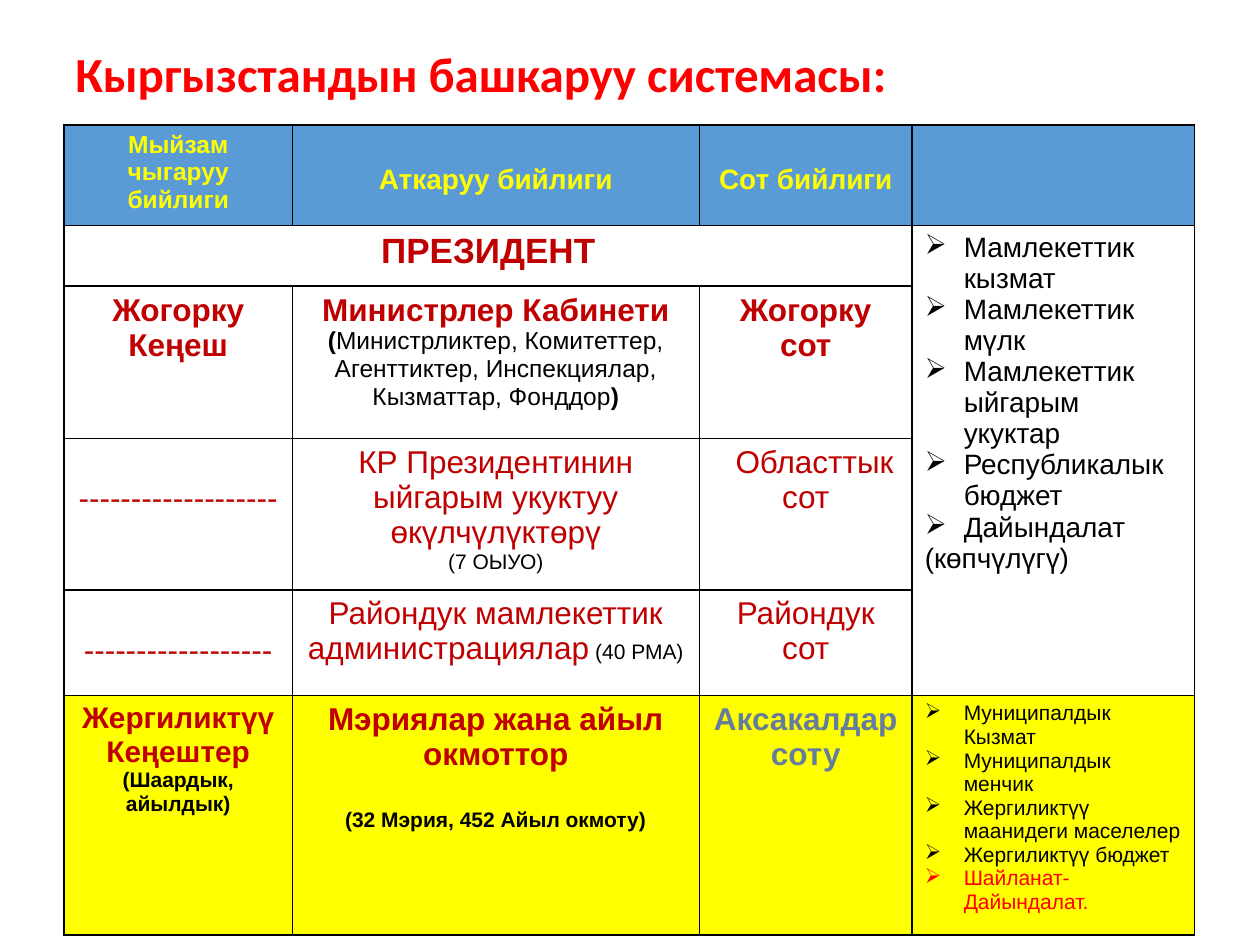
import pptx
import pptx.dml.color
import pptx.enum.text
import pptx.oxml.ns
import pptx.util
from lxml import etree

RGBColor = pptx.dml.color.RGBColor
PP_ALIGN = pptx.enum.text.PP_ALIGN
qn = pptx.oxml.ns.qn

BLACK = RGBColor(0x00, 0x00, 0x00)
WHITE = RGBColor(0xFF, 0xFF, 0xFF)
RED = RGBColor(0xFF, 0x00, 0x00)
DARK_RED = RGBColor(0xC0, 0x00, 0x00)
YELLOW = RGBColor(0xFF, 0xFF, 0x00)
BLUE = RGBColor(0x5B, 0x9B, 0xD5)
SLATE = RGBColor(0x65, 0x7D, 0x9D)

# Percent of the slide's width and height
COLUMNS = [18.1, 32.3, 16.9, 22.4]
ROWS = [10.53, 6.4, 16.13, 13.2, 11.2, 22]
ROW_FILLS = [BLUE, WHITE, WHITE, WHITE, WHITE, YELLOW]

STATE_DUTIES = ["Мамлекеттик кызмат", "Мамлекеттик мүлк", "Мамлекеттик ыйгарым укуктар",
                "Республикалык бюджет", "Дайындалат"]
LOCAL_DUTIES = ["Муниципалдык Кызмат", "Муниципалдык менчик",
                "Жергиликтүү маанидеги маселелер", "Жергиликтүү бюджет",
                "Шайланат- Дайындалат."]


def heading(text, size=18, color=DARK_RED):
    return (text, size, color, True)


def plain(text, size=18, color=DARK_RED):
    return (text, size, color, False)


# (row, column): paragraphs, each a list of runs
CENTRED = {
    (0, 0): [[heading("Мыйзам чыгаруу бийлиги", 14, YELLOW)]],
    (0, 1): [[heading("Аткаруу бийлиги", 16, YELLOW)]],
    (0, 2): [[heading("Сот бийлиги", 16, YELLOW)]],
    (1, 0): [[heading("ПРЕЗИДЕНТ", 20)]],
    (2, 0): [[heading("Жогорку Кеңеш")]],
    (2, 1): [[heading("Министрлер Кабинети")],
             [heading("(", 14, BLACK),
              plain("Министрликтер, Комитеттер, Агенттиктер, Инспекциялар, "
                    "Кызматтар, Фонддор", 14, BLACK),
              heading(")", 14, BLACK)]],
    (2, 2): [[heading("Жогорку сот")]],
    (3, 0): [[plain("-" * 19)]],
    (3, 1): [[plain("КР Президентинин ыйгарым укуктуу өкүлчүлүктөрү")],
             [plain("(7 ОЫУО)", 12, BLACK)]],
    (3, 2): [[plain("Областтык сот")]],
    (4, 0): [[plain("-" * 18)]],
    (4, 1): [[plain("Райондук мамлекеттик администрациялар"),
              plain(" (40 РМА)", 12, BLACK)]],
    (4, 2): [[plain("Райондук сот")]],
    (5, 0): [[heading("Жергиликтүү Кеңештер ", 17),
              heading("(Шаардык, айылдык)", 12, BLACK)]],
    (5, 1): [[heading("Мэриялар жана айыл окмоттор")],
             [heading("(32 Мэрия, 452 Айыл окмоту)", 12, BLACK)]],
    (5, 2): [[heading("Аксакалдар соту", color=SLATE)]],
}
# Inches from the cell's top edge to its text, where the text sits lower
TOP_MARGINS = {(0, 1): 0.31, (0, 2): 0.31, (3, 0): 0.34, (4, 0): 0.34}


class SlideBuilder:
    body_font = "Arial"
    title_font = "Calibri"
    line_width = pptx.util.Pt(1)
    bullet_indent = pptx.util.Inches(0.31)

    def __init__(self, prs):
        self.prs = prs
        self.slide = prs.slides.add_slide(prs.slide_layouts[6])

    def x(self, percent):
        return round(self.prs.slide_width * percent / 100)

    def y(self, percent):
        return round(self.prs.slide_height * percent / 100)

    def add_run(self, p, text, size, color, bold, font=None):
        r = p.add_run()
        r.text = text
        r.font.name = font or self.body_font
        r.font.size = pptx.util.Pt(size)
        r.font.bold = bold
        r.font.color.rgb = color

    def title(self, text, left, top, width, height):
        sp = self.slide.shapes.add_textbox(self.x(left), self.y(top),
                                           self.x(width), self.y(height))
        tf = sp.text_frame
        tf.word_wrap = True
        tf.vertical_anchor = pptx.enum.text.MSO_ANCHOR.MIDDLE
        p = tf.paragraphs[0]
        p.line_spacing = 0.9
        self.add_run(p, text, 28, RED, True, self.title_font)

    def table(self, left, top, columns, rows, row_fills):
        frame = self.slide.shapes.add_table(
            len(rows), len(columns), self.x(left), self.y(top),
            self.x(sum(columns)), self.y(sum(rows)))
        table = frame.table
        table.first_row = table.horz_banding = False
        for column, width in zip(table.columns, columns):
            column.width = self.x(width)
        for row, height, color in zip(table.rows, rows, row_fills):
            row.height = self.y(height)
            for cell in row.cells:
                self.borders(cell)
                cell.fill.solid()
                cell.fill.fore_color.rgb = color
        return table

    def borders(self, cell):
        tc_pr = cell._tc.get_or_add_tcPr()
        for side in ("a:lnL", "a:lnR", "a:lnT", "a:lnB"):
            ln = etree.SubElement(tc_pr, qn(side), w=str(self.line_width))
            fill = etree.SubElement(ln, qn("a:solidFill"))
            etree.SubElement(fill, qn("a:srgbClr"), val=str(BLACK))

    def paragraphs(self, cell, items, align):
        """Fill the cell with one paragraph per list of runs and return them."""
        tf = cell.text_frame
        for i, runs in enumerate(items):
            p = tf.add_paragraph() if i else tf.paragraphs[0]
            p.alignment = align
            for run in runs:
                self.add_run(p, *run)
        return tf.paragraphs

    def bullets(self, cell, items):
        for p in self.paragraphs(cell, items, PP_ALIGN.LEFT):
            p_pr = p._p.get_or_add_pPr()
            p_pr.set("marL", str(self.bullet_indent))
            p_pr.set("indent", str(-self.bullet_indent))
            etree.SubElement(p_pr, qn("a:buChar"), char="➢")


def main():
    prs = pptx.Presentation()
    prs.slide_width = pptx.util.Inches(10)
    prs.slide_height = pptx.util.Inches(7.5)
    s = SlideBuilder(prs)

    s.title("Кыргызстандын башкаруу системасы:", 5, 4.93, 90, 6.27)
    table = s.table(5.1, 13.2, COLUMNS, ROWS, ROW_FILLS)
    table.cell(1, 0).merge(table.cell(1, 2))
    table.cell(1, 3).merge(table.cell(4, 3))

    for position, items in CENTRED.items():
        s.paragraphs(table.cell(*position), items, PP_ALIGN.CENTER)
    for position, margin in TOP_MARGINS.items():
        table.cell(*position).margin_top = pptx.util.Inches(margin)
    regional_court = table.cell(3, 2).text_frame.paragraphs[0]
    regional_court._p.get_or_add_pPr().set("indent", str(pptx.util.Inches(0.14)))
    table.cell(5, 1).text_frame.paragraphs[1].space_before = pptx.util.Pt(20.7)

    state = table.cell(1, 3)
    s.bullets(state, [[plain(text, 16, BLACK)] for text in STATE_DUTIES])
    s.add_run(state.text_frame.add_paragraph(), *plain("(көпчүлүгү)", 16, BLACK))
    s.bullets(table.cell(5, 3),
              [[plain(text, 12, RED if text == LOCAL_DUTIES[-1] else BLACK)]
               for text in LOCAL_DUTIES])

    prs.save("out.pptx")


if __name__ == "__main__":
    main()
